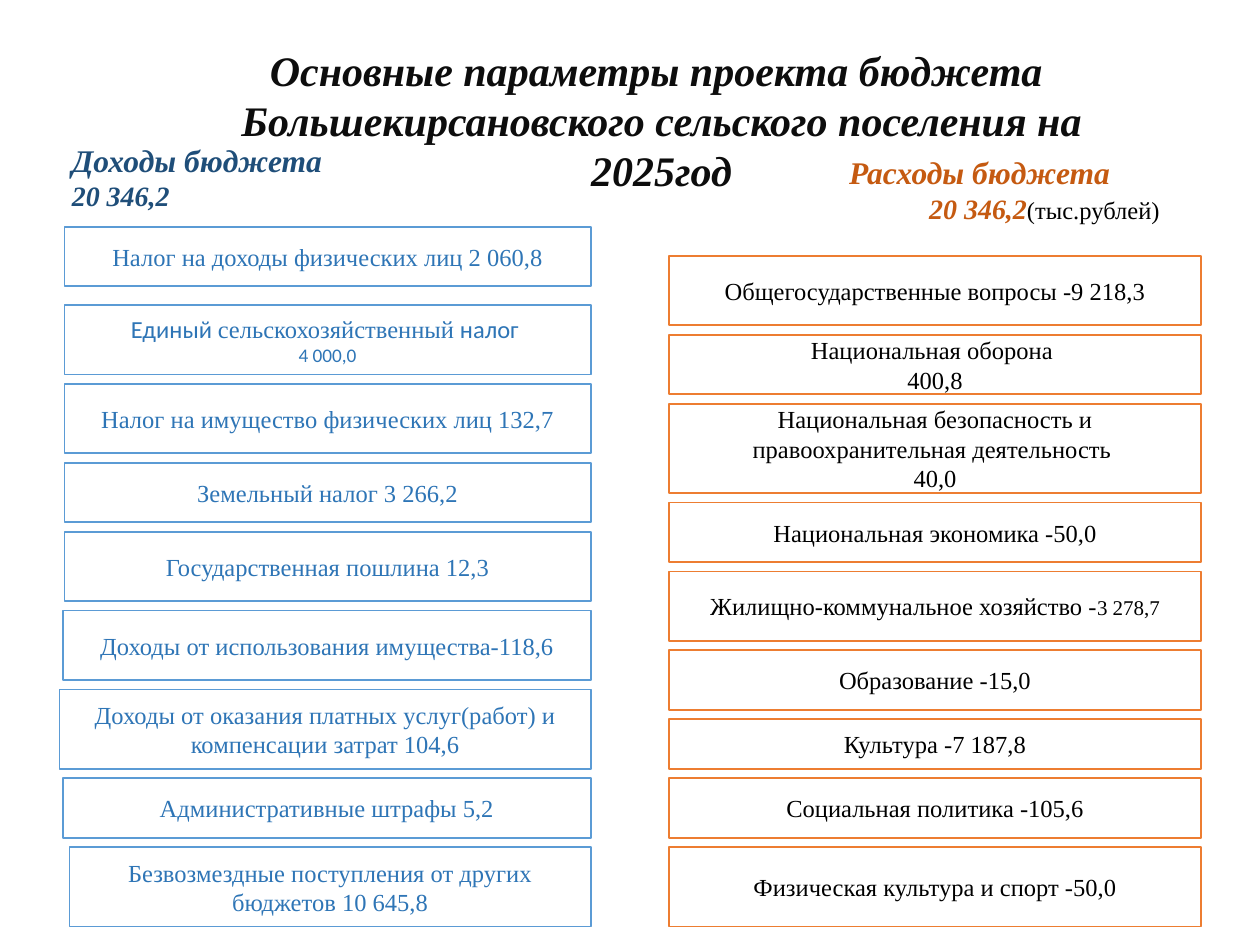
import pptx
import pptx.dml.color
import pptx.enum.shapes
import pptx.enum.text
import pptx.util

Cm = pptx.util.Cm
Pt = pptx.util.Pt
RGBColor = pptx.dml.color.RGBColor
ALIGN = pptx.enum.text.PP_ALIGN
ANCHOR = pptx.enum.text.MSO_ANCHOR

WHITE = RGBColor(0xFF, 0xFF, 0xFF)
BLACK = RGBColor(0x00, 0x00, 0x00)
TITLE_INK = RGBColor(0x0D, 0x0D, 0x0D)
INCOME_HEAD = RGBColor(0x1F, 0x4E, 0x79)
INCOME_LINE = RGBColor(0x5B, 0x9B, 0xD5)
INCOME_TEXT = RGBColor(0x2E, 0x75, 0xB6)
SPENDING_HEAD = RGBColor(0xC5, 0x5A, 0x11)
SPENDING_LINE = RGBColor(0xED, 0x7D, 0x31)

SERIF = "Times New Roman"
SANS = "Calibri"
GAP = 0.19  # cm between the boxes of a column


class BudgetSlide:
    """Holds the text style and the current slide."""

    def __init__(self, deck):
        self.slide = deck.slides.add_slide(deck.slide_layouts[5])
        self.font = SERIF

    def add_run(self, paragraph, text, size, color, bold=False, font=None):
        run = paragraph.add_run()
        run.text = text
        run.font.name = font or self.font
        run.font.size = Pt(size)
        run.font.bold = run.font.italic = bold
        run.font.color.rgb = color

    def next_paragraph(self, frame, index, align):
        paragraph = frame.add_paragraph() if index else frame.paragraphs[0]
        paragraph.alignment = align
        return paragraph

    def title(self, left, top, width, height, lines):
        heading = self.slide.shapes.title
        heading.left, heading.top = Cm(left), Cm(top)
        heading.width, heading.height = Cm(width), Cm(height)
        frame = heading.text_frame
        frame.auto_size = pptx.enum.text.MSO_AUTO_SIZE.NONE
        frame.vertical_anchor = ANCHOR.TOP
        frame.margin_left, frame.margin_right = 0, Cm(0.6)
        for index, line in enumerate(lines):
            paragraph = self.next_paragraph(frame, index, ALIGN.CENTER)
            self.add_run(paragraph, line, 24, TITLE_INK, bold=True)
        # The first line sits slightly to the right of the second
        frame.paragraphs[0]._p.get_or_add_pPr().set("marL", str(Cm(0.6)))

    def column_head(self, left, top, width, name, total, color, align, unit=""):
        box = self.slide.shapes.add_textbox(Cm(left), Cm(top), Cm(width), Cm(1.7))
        frame = box.text_frame
        frame.word_wrap = True
        first = self.next_paragraph(frame, 0, ALIGN.LEFT)
        self.add_run(first, name, 18, color, bold=True)
        second = self.next_paragraph(frame, 1, align)
        self.add_run(second, total, 16, color, bold=True)
        if unit:
            self.add_run(second, unit, 14, BLACK)

    def item_box(self, left, top, right, height, lines, line_color, text_color):
        box = self.slide.shapes.add_shape(
            pptx.enum.shapes.MSO_SHAPE.RECTANGLE,
            Cm(left), Cm(top), Cm(right - left), Cm(height))
        box.shadow.inherit = False
        box.fill.solid()
        box.fill.fore_color.rgb = WHITE
        box.line.color.rgb = line_color
        box.line.width = Pt(1)
        frame = box.text_frame
        frame.word_wrap = True
        frame.vertical_anchor = ANCHOR.MIDDLE
        for index, runs in enumerate(lines):
            paragraph = self.next_paragraph(frame, index, ALIGN.CENTER)
            for text, size, font in runs:
                self.add_run(paragraph, text, size, text_color, font=font)

    def column(self, top, right, items, line_color, text_color):
        for left, height, lines in items:
            self.item_box(left, top, right, height, lines, line_color, text_color)
            top += height + GAP


def plain(*texts):
    """Lines of one 14 pt serif run each."""
    return [[(text, 14, SERIF)] for text in texts]


# Items: left edge (cm), height (cm), lines of runs
INCOME_FIRST = [(1.3, 1.2, plain("Налог на доходы физических лиц 2 060,8"))]
INCOME = [
    (1.3, 1.4, [[("Единый ", 14, SANS), ("сельскохозяйственный", 14, SERIF),
                 (" налог ", 14, SANS)], [("4 000,0", 11, SANS)]]),
    (1.3, 1.4, plain("Налог на имущество физических лиц 132,7")),
    (1.3, 1.2, plain("Земельный налог 3 266,2")),
    (1.3, 1.4, plain("Государственная пошлина 12,3")),
    (1.27, 1.4, plain("Доходы от использования имущества-118,6")),
    (1.2, 1.6, plain("Доходы от оказания платных услуг(работ) и компенсации затрат 104,6")),
    (1.27, 1.2, plain("Административные штрафы 5,2")),
    (1.4, 1.6, plain("Безвозмездные поступления от других бюджетов 10 645,8")),
]
SPENDING = [(13.49, height, lines) for height, lines in [
    (1.4, plain("Общегосударственные вопросы -9 218,3")),
    (1.2, plain("Национальная оборона ", "400,8")),
    (1.8, plain("Национальная безопасность и правоохранительная деятельность ", "40,0")),
    (1.2, plain("Национальная экономика -50,0")),
    (1.4, [[("Жилищно-коммунальное хозяйство -", 14, SERIF), ("3 278,7", 12, SERIF)]]),
    (1.2, plain("Образование -15,0")),
    (1.0, plain("Культура -7 187,8")),
    (1.2, plain("Социальная политика -105,6")),
    (1.6, plain("Физическая культура и спорт -50,0")),
]]


def main():
    deck = pptx.Presentation()
    deck.slide_width, deck.slide_height = Cm(25.4), Cm(19.05)
    budget = BudgetSlide(deck)

    # Title
    budget.title(2.77, 0.76, 21.13, 2.31, [
        "Основные параметры проекта бюджета ",
        "Большекирсановского сельского поселения на 2025год"])

    # Income column
    budget.column_head(1.2, 2.72, 6.5, "Доходы бюджета", "20 346,2",
                       INCOME_HEAD, ALIGN.LEFT)
    budget.column(4.57, 11.91, INCOME_FIRST, INCOME_LINE, INCOME_TEXT)
    budget.column(6.15, 11.91, INCOME, INCOME_LINE, INCOME_TEXT)

    # Spending column
    budget.column_head(16.87, 2.97, 6.76, "Расходы бюджета", "20 346,2",
                       SPENDING_HEAD, ALIGN.RIGHT, unit="(тыс.рублей)")
    budget.column(5.16, 24.21, SPENDING, SPENDING_LINE, BLACK)

    deck.save("out.pptx")


if __name__ == "__main__":
    main()
